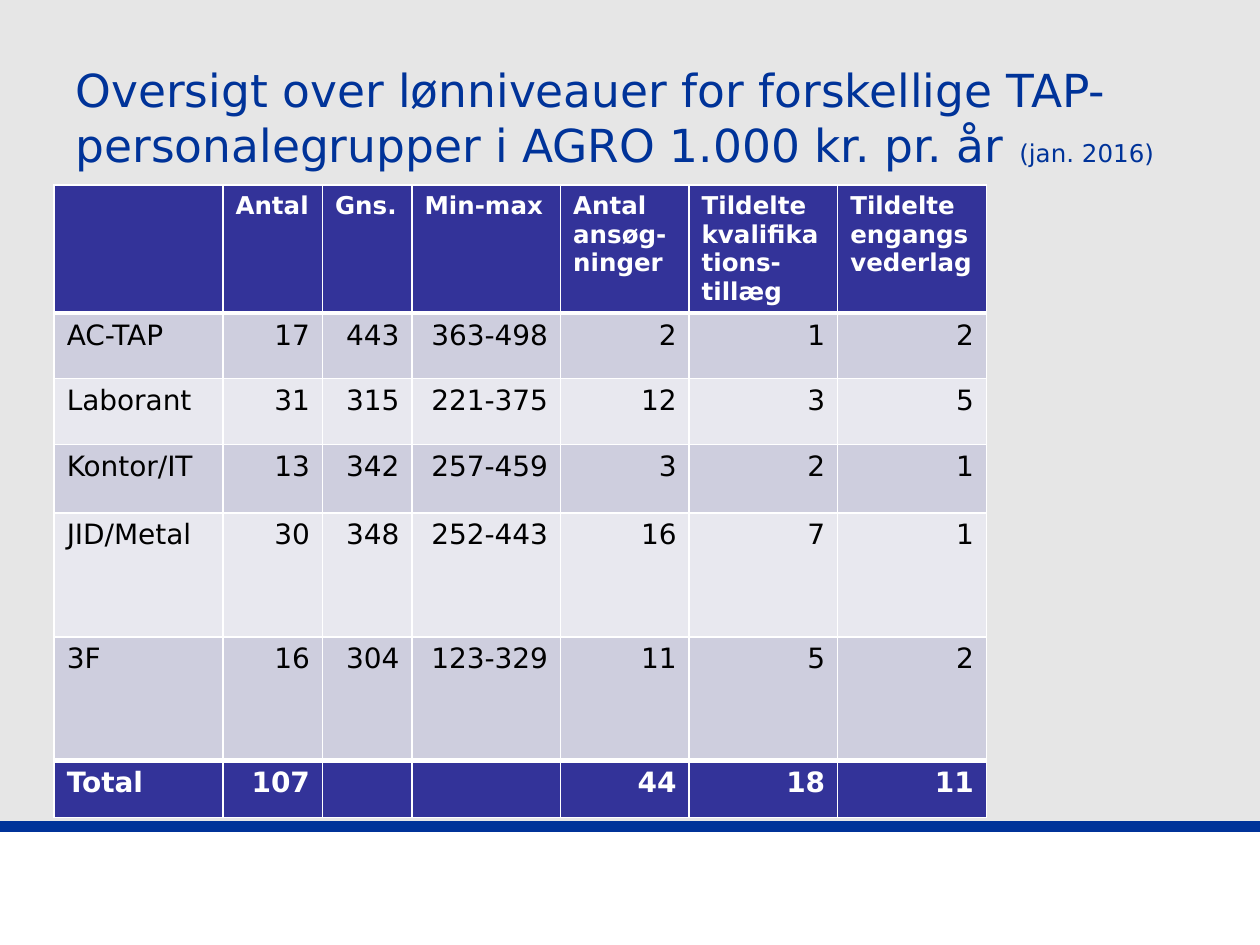
from dataclasses import dataclass

from lxml import etree
from pptx import Presentation
from pptx.dml.color import RGBColor
from pptx.enum.dml import MSO_THEME_COLOR
from pptx.enum.shapes import MSO_CONNECTOR, MSO_SHAPE
from pptx.enum.text import MSO_ANCHOR, MSO_AUTO_SIZE, PP_ALIGN
from pptx.oxml.ns import qn
from pptx.util import Inches, Pt

LEFT, RIGHT = PP_ALIGN.LEFT, PP_ALIGN.RIGHT
MIDDLE = MSO_ANCHOR.MIDDLE
NO_AUTOFIT = MSO_AUTO_SIZE.NONE
RECTANGLE = MSO_SHAPE.RECTANGLE
STRAIGHT = MSO_CONNECTOR.STRAIGHT
TITLE_ONLY = 5


@dataclass(frozen=True)
class Theme:
    """Colours, type sizes and line widths of the slide."""
    font: str = "DejaVu Sans"
    background: str = "E6E6E6"
    white: str = "FFFFFF"
    black: str = "000000"
    accent: str = "003399"
    strong: str = "333399"
    bands: tuple = ("CECEDE", "E8E8EF")
    title_size: int = 26
    small_size: int = 14
    body_size: int = 16
    rule_width: int = 6
    thin: int = 1
    thick: int = 3


THEME = Theme()
SLIDE_WIDTH, SLIDE_HEIGHT = 10, 7.5
TITLE_BOX = (0.5, 0.3, 9.03, 1.25)
TABLE_BOX = (0.43, 1.47, 7.4, 5.02)
FOOTER_BOX = (0, 6.56, 10, 0.94)

COLUMN_SHARES = (1.34, 0.79, 0.71, 1.18, 1.02, 1.18, 1.18)
ROW_SHARES = (1.01, 0.52, 0.52, 0.54, 0.98, 0.98, 0.45)
PAY_ROWS = (
    ("", "Antal", "Gns.", "Min-max", "Antal ansøg-ninger",
     "Tildelte kvalifikations-tillæg", "Tildelte engangs\nvederlag"),
    ("AC-TAP", "17", "443", "363-498", "2", "1", "2"),
    ("Laborant", "31", "315", "221-375", "12", "3", "5"),
    ("Kontor/IT", "13", "342", "257-459", "3", "2", "1"),
    ("JID/Metal", "30", "348", "252-443", "16", "7", "1"),
    ("3F", "16", "304", "123-329", "11", "5", "2"),
    ("Total", "107", "", "", "44", "18", "11"),
)


def rgb(colour):
    """Turn a hex string into a colour."""
    return RGBColor.from_string(colour)


def add_text(paragraph, text, *, size, colour, bold=False, align=LEFT):
    """Add one formatted run to a paragraph."""
    paragraph.alignment = align
    run = paragraph.add_run()
    run.text = text
    run.font.name = THEME.font
    run.font.size = Pt(size)
    run.font.bold = bold
    run.font.color.rgb = rgb(colour)


def add_footer(slide, box):
    """Place the white footer band and the blue rule along its top."""
    left, top, width, height = map(Inches, box)
    band = slide.shapes.add_shape(RECTANGLE, left, top, width, height)
    band.shadow.inherit = False
    band.fill.solid()
    band.fill.fore_color.rgb = rgb(THEME.white)
    band.line.fill.background()
    rule = slide.shapes.add_connector(STRAIGHT, left, top, left + width, top)
    rule.line.color.rgb = rgb(THEME.accent)
    rule.line.width = Pt(THEME.rule_width)
    etree.SubElement(rule._element.spPr, qn("a:effectLst"))


def add_title(slide, box):
    """Place the heading with its small date."""
    title = slide.shapes.title
    title.left, title.top, title.width, title.height = map(Inches, box)
    frame = title.text_frame
    frame.word_wrap = True
    frame.auto_size = NO_AUTOFIT
    frame.vertical_anchor = MIDDLE
    heading = frame.paragraphs[0]
    add_text(heading, "Oversigt over lønniveauer for forskellige "
             "TAP-personalegrupper i AGRO 1.000 kr. pr. år ",
             size=THEME.title_size, colour=THEME.accent)
    add_text(heading, "(jan. 2016)", size=THEME.small_size, colour=THEME.accent)


def set_borders(cell, top, bottom):
    """Draw white cell borders with the given top and bottom widths."""
    properties = cell._tc.get_or_add_tcPr()
    widths = {"L": THEME.thin, "R": THEME.thin, "T": top, "B": bottom}
    for side, width in widths.items():
        line = etree.SubElement(properties, qn(f"a:ln{side}"), w=str(Pt(width)))
        fill = etree.SubElement(line, qn("a:solidFill"))
        etree.SubElement(fill, qn("a:srgbClr"), val=THEME.white)


def fill_cell(cell, text, row, column):
    """Write and format one cell according to its place in the table."""
    last = len(PAY_ROWS) - 1
    header, strong = row == 0, row in (0, last)
    set_borders(cell,
                top=THEME.thick if row in (1, last) else THEME.thin,
                bottom=THEME.thick if row in (0, last - 1) else THEME.thin)
    cell.fill.solid()
    cell.fill.fore_color.rgb = rgb(THEME.strong if strong else THEME.bands[(row - 1) % 2])
    if not text:
        return
    for index, line in enumerate(text.split("\n")):
        frame = cell.text_frame
        paragraph = frame.add_paragraph() if index else frame.paragraphs[0]
        add_text(paragraph, line, bold=strong,
                 size=THEME.small_size if header else THEME.body_size,
                 colour=THEME.white if strong else THEME.black,
                 align=LEFT if header or column == 0 else RIGHT)


def add_pay_table(slide, box):
    """Place the pay table, sharing out its box among columns and rows."""
    left, top, width, height = map(Inches, box)
    table = slide.shapes.add_table(len(ROW_SHARES), len(COLUMN_SHARES),
                                   left, top, width, height).table
    for column, share in zip(table.columns, COLUMN_SHARES):
        column.width = int(width * share / sum(COLUMN_SHARES))
    for row, share in zip(table.rows, ROW_SHARES):
        row.height = int(height * share / sum(ROW_SHARES))
    for row, texts in enumerate(PAY_ROWS):
        for column, text in enumerate(texts):
            fill_cell(table.cell(row, column), text, row, column)


def main():
    """Build and save the slide."""
    deck = Presentation()
    deck.slide_width, deck.slide_height = Inches(SLIDE_WIDTH), Inches(SLIDE_HEIGHT)
    slide = deck.slides.add_slide(deck.slide_layouts[TITLE_ONLY])
    slide.background.fill.solid()
    slide.background.fill.fore_color.rgb = rgb(THEME.background)
    add_footer(slide, FOOTER_BOX)
    add_title(slide, TITLE_BOX)
    add_pay_table(slide, TABLE_BOX)
    deck.save("out.pptx")


if __name__ == "__main__":
    main()
